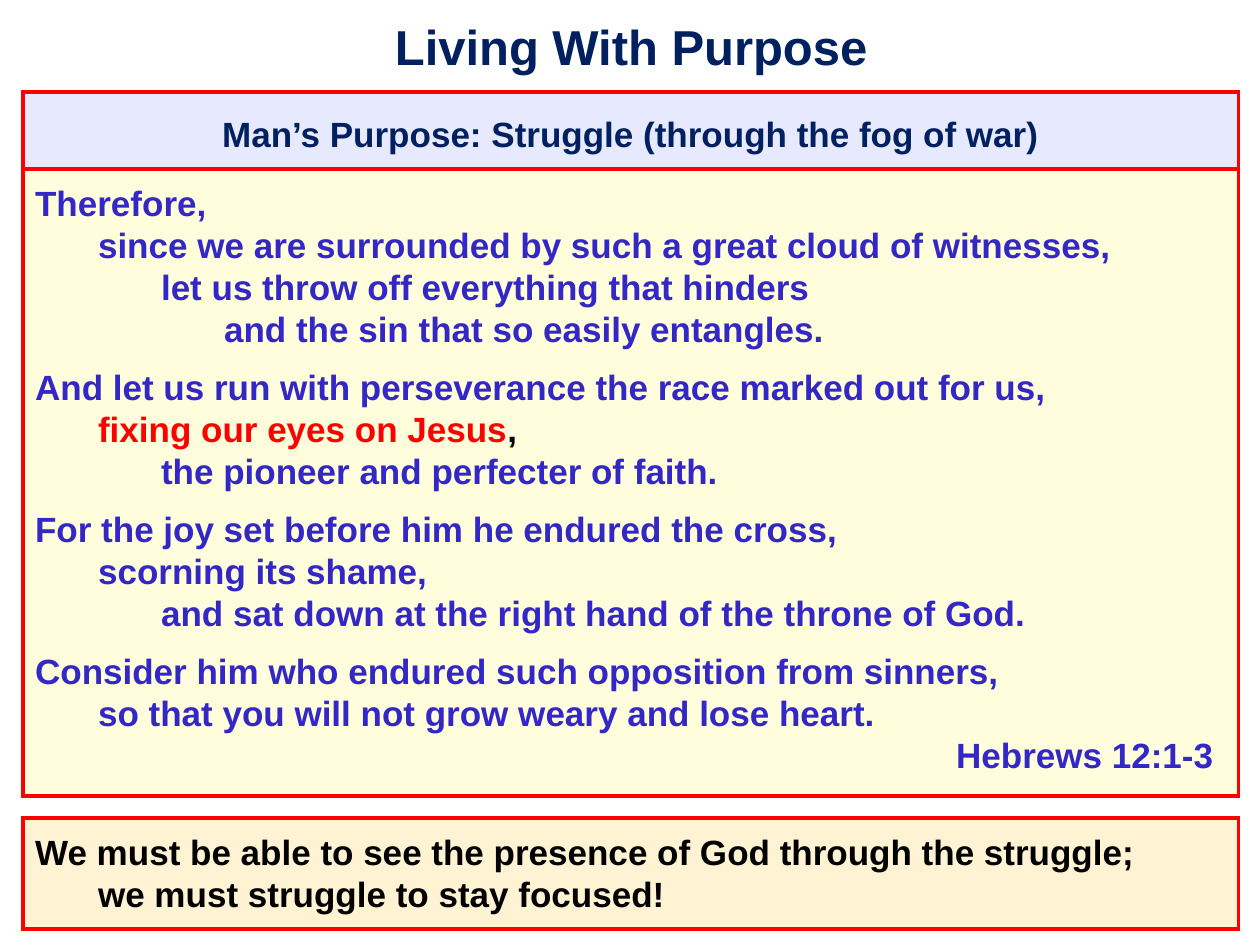
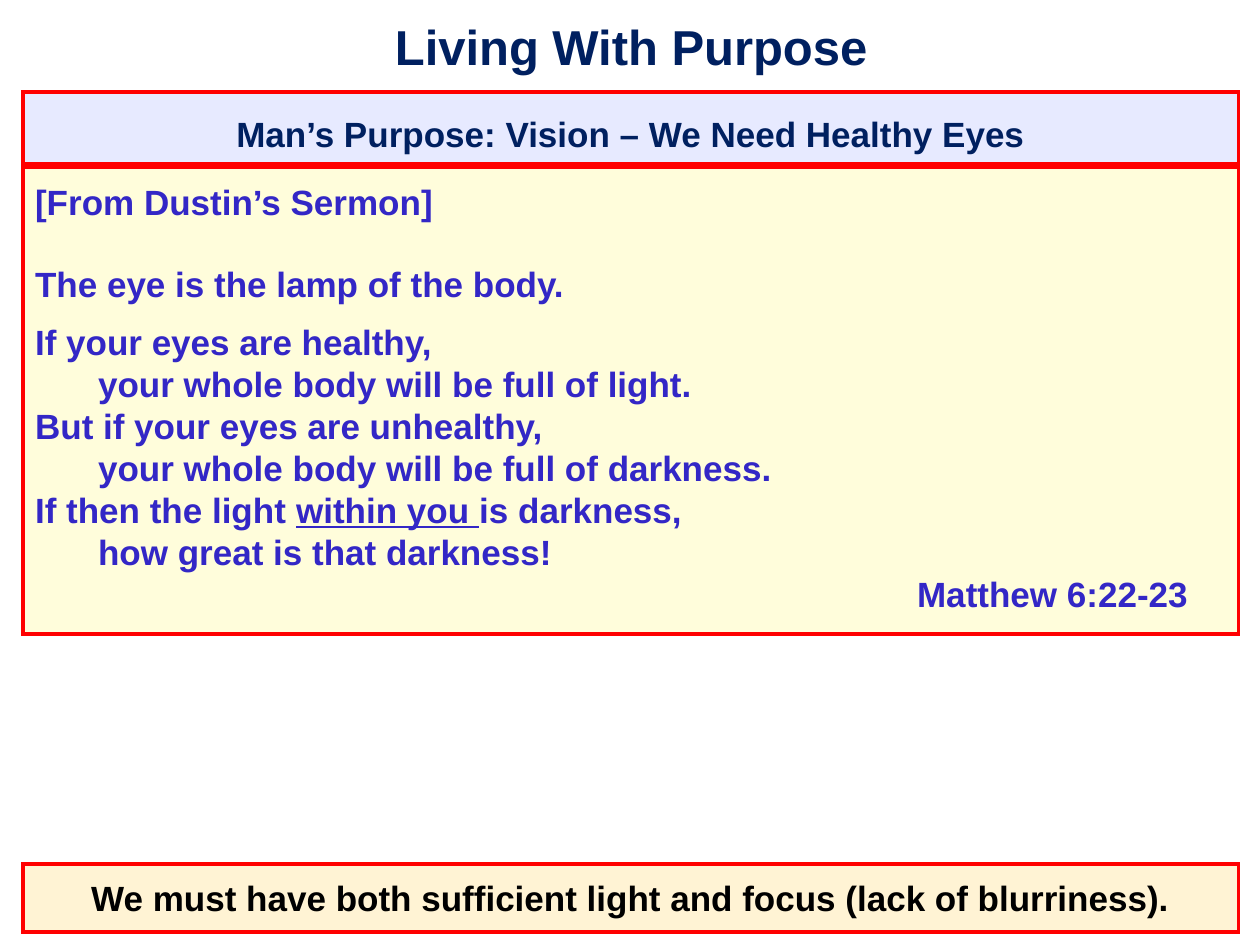
from lxml.etree import SubElement
from pptx import Presentation
from pptx.dml.color import RGBColor
from pptx.enum.shapes import MSO_SHAPE
from pptx.enum.text import MSO_ANCHOR, PP_ALIGN
from pptx.oxml.ns import qn
from pptx.util import Pt

PX = 9144  # EMU per px, 100 px to the inch
FONT = "Arial"
COLORS = {
    "navy": "002060",
    "verse": "3327C6",
    "red": "FF0000",
    "black": "000000",
    "heading_fill": "D0D6FF",
    "verse_fill": "FFFDB8",
    "lesson_fill": "FFE8AA",
}

# Shared geometry
BOX_LEFT, BOX_WIDTH = 18, 965
HEADING_TOP = 73
TAB = 50
TITLE_SIZE, TEXT_SIZE = 28, 20
STANZA_GAP, BLANK_GAP = 9.2, 23


def rgb(name):
    return RGBColor.from_string(COLORS[name])


def line(*runs, indent=0, gap=0):
    """One line of text; a run is a string or (string, color, underline)."""
    return runs, indent, gap


# Text parts
def set_frame(sp, insets):
    tf = sp.text_frame
    tf.word_wrap = True
    tf.margin_left, tf.margin_top, tf.margin_right, tf.margin_bottom = (
        n * PX for n in insets)
    return tf


def add_run(p, text, size, color, underline=False):
    r = p.add_run()
    r.text = text
    r.font.name = FONT
    r.font.size = Pt(size)
    r.font.bold = True
    r.font.color.rgb = rgb(color)
    if underline:
        r.font.underline = True


def add_lines(tf, lines, color, align, spacing=1.0):
    for i, (runs, indent, gap) in enumerate(lines):
        p = tf.paragraphs[0] if i == 0 else tf.add_paragraph()
        p.alignment = align
        p.line_spacing = spacing
        if gap:
            p.space_before = Pt(gap)
        if indent:
            p._p.get_or_add_pPr().set("marL", str(indent * PX))
        for run in runs:
            if isinstance(run, str):
                run = (run, color, False)
            text, run_color, underline = run
            add_run(p, text, TEXT_SIZE, run_color, underline)


# Slide parts
def add_title(s, text):
    sp = s.shapes.add_textbox(14 * PX, 2 * PX, 978 * PX, 69 * PX)
    tf = set_frame(sp, (10, 6, 14, 6))
    tf.vertical_anchor = MSO_ANCHOR.MIDDLE
    p = tf.paragraphs[0]
    p.alignment = PP_ALIGN.CENTER
    add_run(p, text, TITLE_SIZE, "navy")


def add_box(s, top, height, fill, lines, color, align=PP_ALIGN.LEFT, spacing=1.0):
    sp = s.shapes.add_shape(MSO_SHAPE.RECTANGLE, BOX_LEFT * PX, top * PX,
                            BOX_WIDTH * PX, height * PX)
    sp.shadow.inherit = False
    sp.fill.solid()
    sp.fill.fore_color.rgb = rgb(fill)
    # Half-transparent fill
    clr = sp._element.spPr.find(qn("a:solidFill")).find(qn("a:srgbClr"))
    SubElement(clr, qn("a:alpha"), val="50000")
    # Red border with square corners
    sp.line.color.rgb = rgb("red")
    sp.line.width = Pt(2.25)
    SubElement(sp._element.spPr.find(qn("a:ln")), qn("a:miter"), lim="800000")
    tf = set_frame(sp, (10, 10, 10, 10))
    tf.vertical_anchor = MSO_ANCHOR.TOP
    add_lines(tf, lines, color, align, spacing)


def add_heading(s, height, text):
    add_box(s, HEADING_TOP, height, "heading_fill", [line(text)], "navy",
            PP_ALIGN.CENTER, 1.2)


def add_verse(s, top, height, lines):
    add_box(s, top, height, "verse_fill", lines, "verse")


def add_lesson(s, top, height, lines, align=PP_ALIGN.LEFT):
    add_box(s, top, height, "lesson_fill", lines, "black", align)


def new_slide(prs):
    s = prs.slides.add_slide(prs.slide_layouts[6])
    add_title(s, "Living With Purpose")
    return s


# Slides
def add_struggle_slide(prs):
    s = new_slide(prs)
    add_heading(s, 61, "Man’s Purpose: Struggle (through the fog of war)")
    add_verse(s, 134, 498, [
        line("Therefore,"),
        line("since we are surrounded by such a great cloud of witnesses,", indent=TAB),
        line("let us throw off everything that hinders", indent=2 * TAB),
        line("and the sin that so easily entangles.", indent=3 * TAB),
        line("And let us run with perseverance the race marked out for us,",
             gap=STANZA_GAP),
        line(("fixing our eyes on Jesus", "red", False), (",", "black", False),
             indent=TAB),
        line("the pioneer and perfecter of faith.", indent=2 * TAB),
        line("For the joy set before him he endured the cross,", gap=STANZA_GAP),
        line("scorning its shame,", indent=TAB),
        line("and sat down at the right hand of the throne of God.", indent=2 * TAB),
        line("Consider him who endured such opposition from sinners,",
             gap=STANZA_GAP),
        line("so that you will not grow weary and lose heart.", indent=TAB),
        line("Hebrews 12:1-3", indent=731),
    ])
    add_lesson(s, 649, 88, [
        line("We must be able to see the presence of God through the struggle;"),
        line("we must struggle to stay focused!", indent=TAB),
    ])


def add_vision_slide(prs):
    s = new_slide(prs)
    add_heading(s, 57, "Man’s Purpose: Vision – We Need Healthy Eyes")
    add_lesson(s, 686, 54, [
        line("We must have both sufficient light and focus (lack of blurriness)."),
    ], PP_ALIGN.CENTER)
    add_verse(s, 133, 370, [
        line("[From Dustin’s Sermon]"),
        line("The eye is the lamp of the body.", gap=BLANK_GAP),
        line("If your eyes are healthy,", gap=STANZA_GAP),
        line("your whole body will be full of light.", indent=TAB),
        line("But if your eyes are unhealthy,"),
        line("your whole body will be full of darkness.", indent=TAB),
        line("If then the light ", ("within you ", "verse", True), "is darkness,"),
        line("how great is that darkness!", indent=TAB),
        line("Matthew 6:22-23", indent=14 * TAB),
    ])


def main():
    prs = Presentation()
    prs.slide_width, prs.slide_height = 1000 * PX, 750 * PX
    add_struggle_slide(prs)
    add_vision_slide(prs)
    prs.save("out.pptx")


if __name__ == "__main__":
    main()
